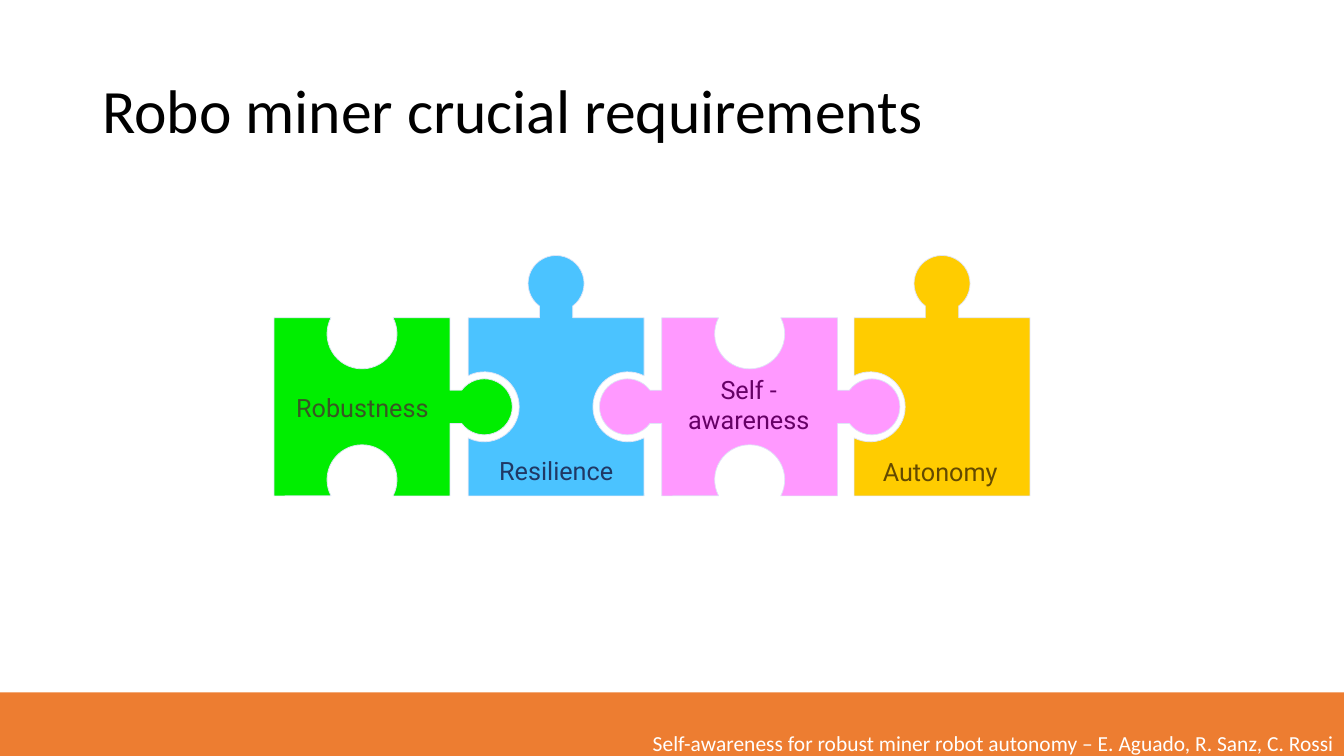
from math import asin, cos, pi, sin, tan

from lxml import etree
from pptx import Presentation
from pptx import util as u
from pptx.dml.color import RGBColor
from pptx.enum import shapes, text
from pptx.oxml import ns

# Colours
BLACK = RGBColor(0x00, 0x00, 0x00)
WHITE = RGBColor(0xFF, 0xFF, 0xFF)
ORANGE = RGBColor(0xED, 0x7D, 0x31)
OUTLINE = RGBColor(0xE0, 0xE5, 0xF7)
GREEN, DARK_GREEN = RGBColor(0x00, 0xEE, 0x00), RGBColor(0x38, 0x57, 0x23)
BLUE, DARK_BLUE = RGBColor(0x4B, 0xC3, 0xFF), RGBColor(0x20, 0x38, 0x64)
PINK, PURPLE = RGBColor(0xFF, 0x99, 0xFF), RGBColor(0x66, 0x00, 0x66)
YELLOW, BROWN = RGBColor(0xFF, 0xCC, 0x00), RGBColor(0x64, 0x4A, 0x00)

# Puzzle edges: direction (1 outward, -1 inward), circle offset, radius, half opening
KNOB = (1, 24.5, 20, 11.9)
SOCKET = (-1, 11.5, 25, 22.2)
FLAT = None
ARC_CURVES = 4

# Left, label, fill, text colour, edges (top, right, bottom, left), label left, top, height
PIECES = [
    (0, "Robustness", GREEN, DARK_GREEN, (SOCKET, KNOB, SOCKET, FLAT), 3.6, 49.5, 29),
    (138.6, "Resilience", BLUE, DARK_BLUE, (KNOB, SOCKET, FLAT, SOCKET), 3.4, 94.8, 29),
    (276.9, "Self - awareness", PINK, PURPLE, (SOCKET, KNOB, SOCKET, KNOB), 2.6, 36.5, 51),
    (414.3, "Autonomy", YELLOW, BROWN, (KNOB, FLAT, FLAT, SOCKET), 2, 95.6, 29),
]


def write_text(shape, words, *, font, size, color, align=text.PP_ALIGN.LEFT,
               anchor=text.MSO_ANCHOR.TOP, spacing=1.0, bottom=3.6,
               fit=text.MSO_AUTO_SIZE.NONE):
    frame = shape.text_frame
    frame.word_wrap = True
    frame.auto_size = fit
    frame.vertical_anchor = anchor
    frame.margin_bottom = u.Pt(bottom)
    paragraph = frame.paragraphs[0]
    paragraph.alignment = align
    paragraph.line_spacing = spacing
    run = paragraph.add_run()
    run.text = words
    run.font.name = font
    run.font.size = u.Pt(size)
    run.font.color.rgb = color


def add_title(slide, left, top, width, height):
    box = slide.shapes.add_textbox(*map(u.Pt, (left, top, width, height)))
    write_text(box, "Robo miner crucial requirements", font="Calibri", size=44,
               color=BLACK, anchor=text.MSO_ANCHOR.MIDDLE, spacing=0.9)


def add_footer(slide, left, top, width, height):
    bar = slide.shapes.add_shape(shapes.MSO_SHAPE.RECTANGLE,
                                 *map(u.Pt, (left, top, width, height)))
    bar.shadow.inherit = False
    bar.fill.solid()
    bar.fill.fore_color.rgb = ORANGE
    bar.line.fill.background()
    write_text(bar, "Self-awareness for robust miner robot autonomy – E. Aguado, R. Sanz, C. Rossi",
               font="Calibri", size=15.3, color=WHITE, align=text.PP_ALIGN.RIGHT,
               anchor=text.MSO_ANCHOR.BOTTOM, bottom=0)


def edge_profile(edge):
    """Segments as point lists: one point for a line, three for a curve.

    A point is (distance along the edge from its middle, distance outward).
    """
    if edge is FLAT:
        return []
    direction, offset, radius, opening = edge
    sweep = pi - asin(opening / radius)
    step = 2 * sweep / ARC_CURVES
    handle = 4 / 3 * tan(step / 4)

    def arc_point(angle, tangent=0):
        return (radius * (sin(angle) + tangent * cos(angle)),
                direction * (offset + radius * (cos(angle) - tangent * sin(angle))))

    segments = [[(-opening, 0)]]
    if edge is KNOB:
        segments.append([arc_point(-sweep)])
    for index in range(ARC_CURVES):
        start = index * step - sweep
        segments.append([arc_point(start, handle), arc_point(start + step, -handle),
                         arc_point(start + step)])
    if edge is KNOB:
        segments.append([(opening, 0)])
    return segments


def piece_outline(left, top, width, height, edges):
    """Segments of the whole outline, clockwise from the top left corner."""
    outline = []
    directions = [(1, 0), (0, 1), (-1, 0), (0, -1)]
    for edge, (along_x, along_y) in zip(edges, directions):
        out_x, out_y = along_y, -along_x
        middle_x = left + width / 2 * (1 + out_x)
        middle_y = top + height / 2 * (1 + out_y)
        half = (width if along_x else height) / 2
        for segment in [[(-half, 0)], *edge_profile(edge)]:
            outline.append([(u.Pt(middle_x + along * along_x + out * out_x),
                             u.Pt(middle_y + along * along_y + out * out_y))
                            for along, out in segment])
    return outline


def add_outline(slide, outline):
    ends = [segment[-1] for segment in outline]
    builder = slide.shapes.build_freeform(*ends[0])
    builder.add_line_segments(ends[1:], close=True)
    shape = builder.convert_to_shape()

    # Bend the segments that have control points
    lines = list(shape.element.iter(ns.qn("a:lnTo")))
    for line, segment in zip(lines, outline[1:]):
        if len(segment) == 3:
            curve = etree.Element(ns.qn("a:cubicBezTo"))
            for x, y in segment:
                etree.SubElement(curve, ns.qn("a:pt"),
                                 x=str(x - shape.left), y=str(y - shape.top))
            line.getparent().replace(line, curve)
    return shape


def add_piece(slide, left, top, width, height, piece):
    _, label, fill, color, edges, label_left, label_top, label_height = piece
    shape = add_outline(slide, piece_outline(left, top, width, height, edges))
    shape.shadow.inherit = False
    shape.fill.solid()
    shape.fill.fore_color.rgb = fill
    shape.line.color.rgb = OUTLINE
    shape.line.width = u.Pt(0.5)

    # Label
    box = slide.shapes.add_textbox(u.Pt(left + label_left), u.Pt(top + label_top),
                                   u.Pt(119), u.Pt(label_height))
    write_text(box, label, font="Roboto", size=18, color=color,
               align=text.PP_ALIGN.CENTER, fit=text.MSO_AUTO_SIZE.SHAPE_TO_FIT_TEXT)


def add_puzzle(slide, left, top, piece_width, height):
    for piece in PIECES:
        add_piece(slide, left + piece[0], top, piece_width, height, piece)


def main():
    presentation = Presentation()
    presentation.slide_width, presentation.slide_height = u.Pt(960), u.Pt(540)
    slide = presentation.slides.add_slide(presentation.slide_layouts[6])
    add_title(slide, 66, 28.8, 828, 104.4)
    add_footer(slide, 0, 494.6, 960, 45.4)
    add_puzzle(slide, 195.8, 227, 125.6, 127.2)
    presentation.save("out.pptx")


if __name__ == "__main__":
    main()
